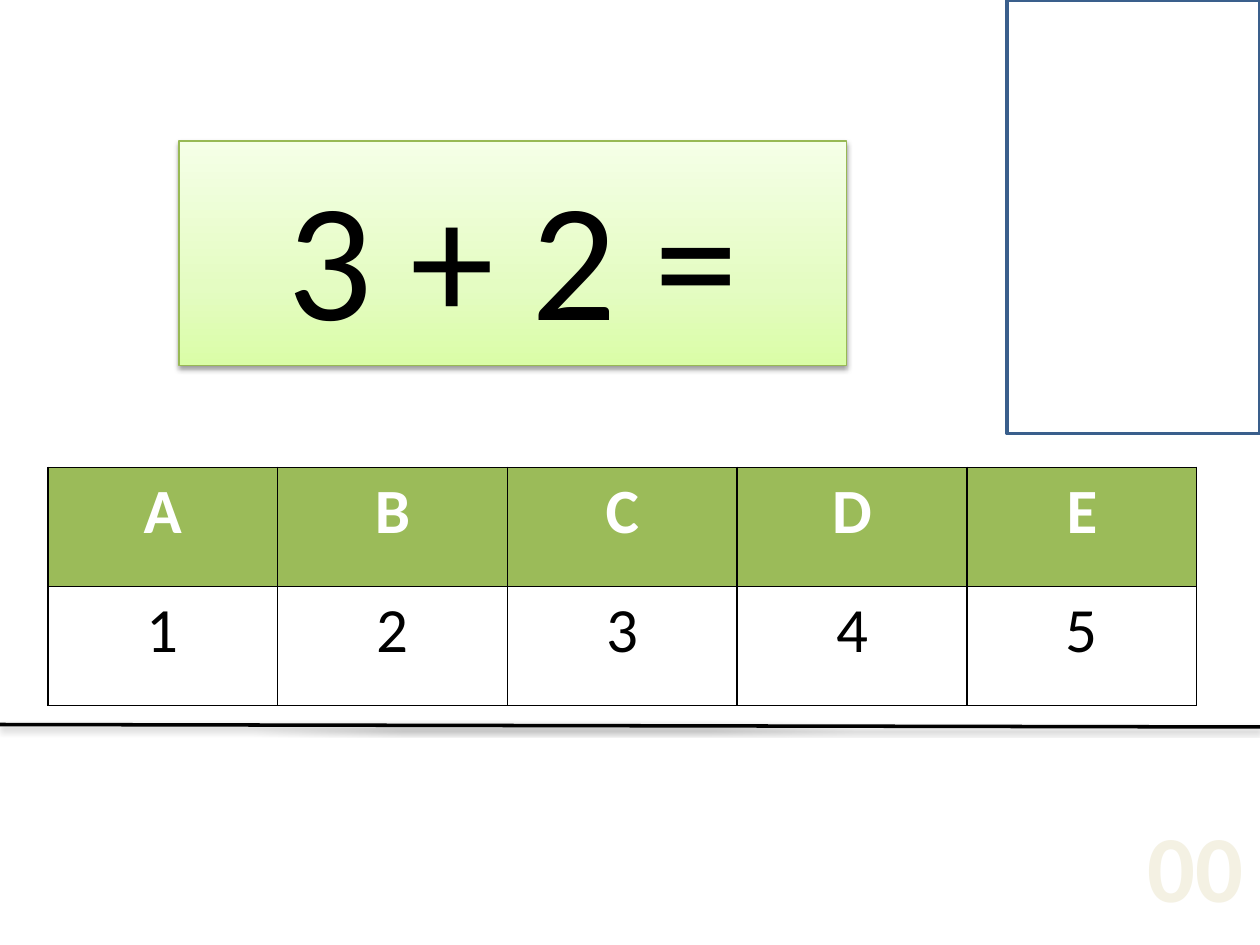
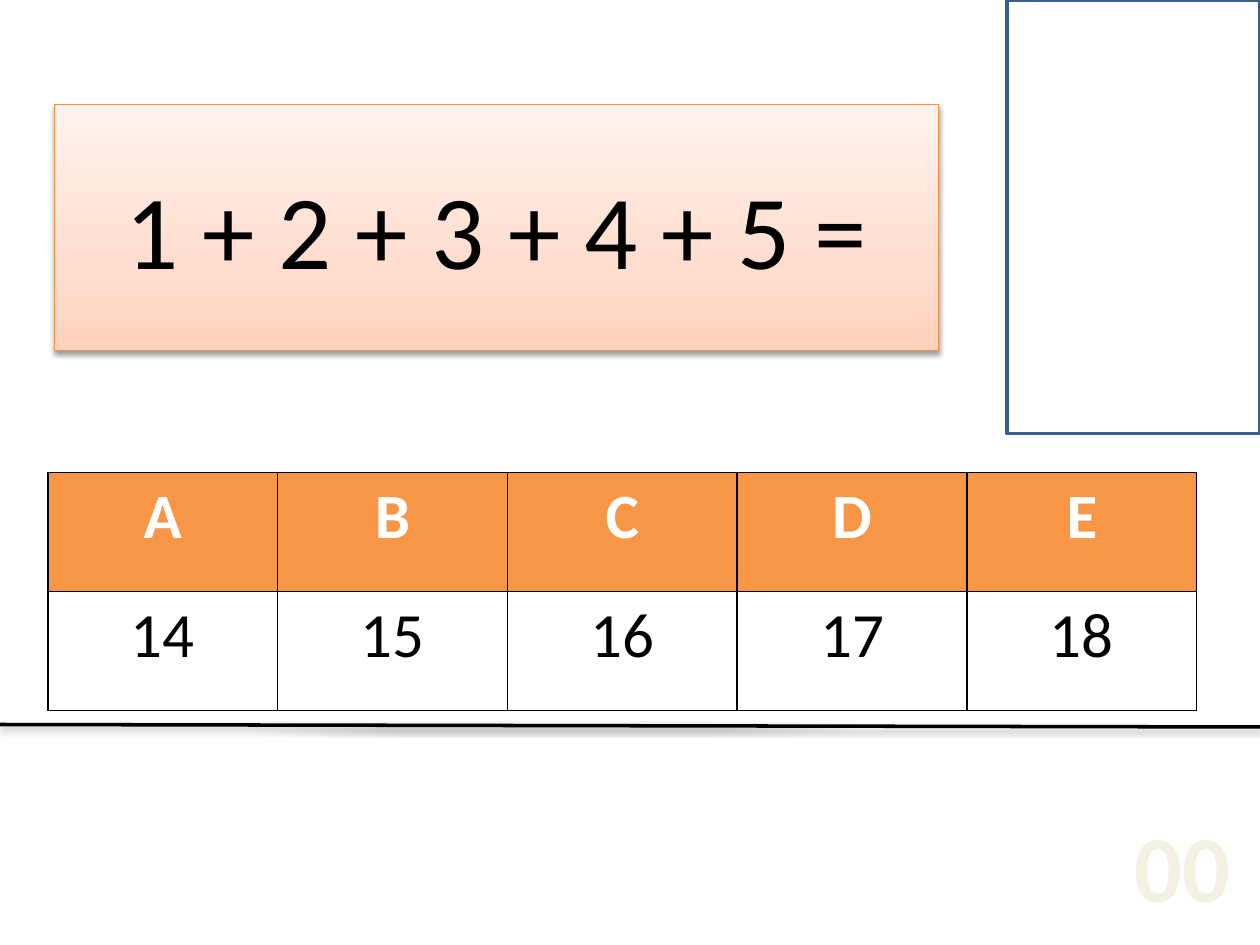
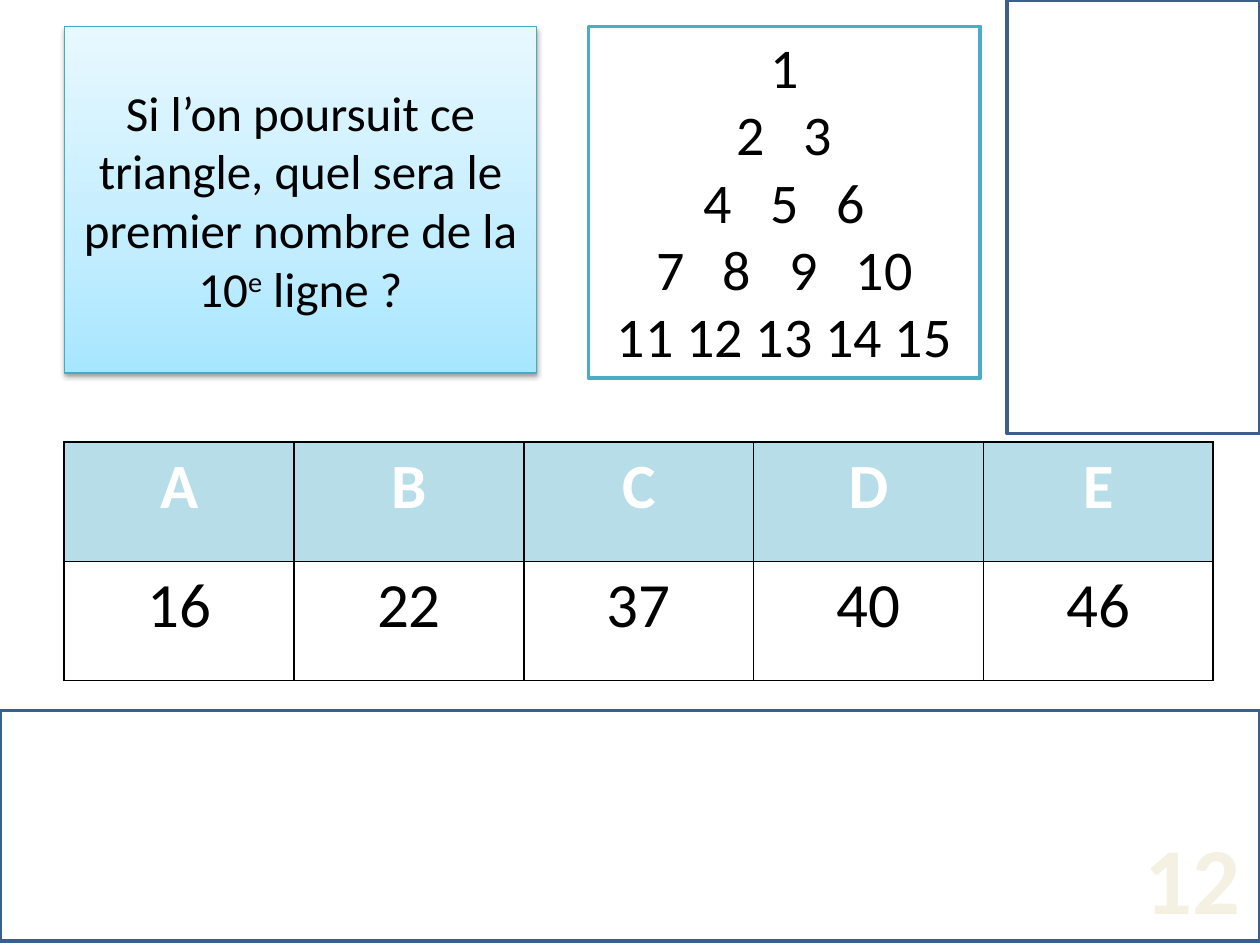
from dataclasses import dataclass
from typing import Any

from lxml.etree import SubElement
from pptx import Presentation
from pptx.dml.color import RGBColor
from pptx.enum.shapes import MSO_CONNECTOR, MSO_SHAPE
from pptx.enum.text import MSO_ANCHOR, PP_ALIGN
from pptx.oxml.ns import qn
from pptx.util import Emu, Inches, Pt

WIDTH, HEIGHT = Inches(10), Inches(7.5)
GRID_COLS, GRID_ROWS = 100, 75
FONT = "Calibri"
BLACK = RGBColor(0x00, 0x00, 0x00)
WHITE = RGBColor(0xFF, 0xFF, 0xFF)
NAVY = RGBColor(0x3A, 0x5F, 0x8C)
CREAM = RGBColor(0xF4, 0xF1, 0xE3)
TEAL = RGBColor(0x4B, 0xAC, 0xC6)
LETTERS = ("A", "B", "C", "D", "E")
STOPS = (0, 35, 100)


@dataclass(frozen=True)
class Box:
    col: float
    row: float
    cols: float
    rows: float

    def emu(self) -> tuple[Emu, Emu, Emu, Emu]:
        return x(self.col), y(self.row), x(self.cols), y(self.rows)


@dataclass(frozen=True)
class Theme:
    gradient: tuple[RGBColor, RGBColor, RGBColor]
    edge: RGBColor
    header: RGBColor


@dataclass(frozen=True)
class Run:
    text: str
    baseline: int = 0
    spacing: float = 0


@dataclass(frozen=True)
class Question:
    theme: Theme
    title: tuple[Run, ...]
    title_box: Box
    size: int
    answers: tuple[str, ...]
    table_box: Box
    counter: str
    counter_box: Box
    triangle: tuple[str, ...] = ()


GREEN_THEME = Theme(
    (RGBColor(0xDA, 0xFD, 0xA7), RGBColor(0xE4, 0xFC, 0xC2), RGBColor(0xF5, 0xFF, 0xE7)),
    RGBColor(0x98, 0xB9, 0x55), RGBColor(0x9B, 0xBB, 0x59))
ORANGE_THEME = Theme(
    (RGBColor(0xFF, 0xD2, 0xBD), RGBColor(0xFF, 0xDE, 0xD0), RGBColor(0xFF, 0xF2, 0xED)),
    RGBColor(0xF6, 0x92, 0x40), RGBColor(0xF7, 0x96, 0x46))
BLUE_THEME = Theme(
    (RGBColor(0xA7, 0xE6, 0xFF), RGBColor(0xC1, 0xED, 0xFF), RGBColor(0xE7, 0xF8, 0xFF)),
    RGBColor(0x46, 0xAA, 0xC5), RGBColor(0xB7, 0xDE, 0xE8))

SIDE_BOX = Box(79.9, 0, 20.1, 34.4)
BOTTOM_BOX = Box(0, 56.4, 100, 18.3)
TRIANGLE_BOX = Box(46.7, 2.1, 31.1, 27.9)

QUESTIONS = (
    Question(GREEN_THEME, (Run("3 + 2 ="),), Box(14.2, 11.2, 53, 17.8), 96,
             ("1", "2", "3", "4", "5"), Box(3.8, 37.1, 91.2, 18.9),
             "00", Box(90, 63.6, 9.7, 10.1)),
    Question(ORANGE_THEME, (Run("1 + 2 + 3 + 4 + 5 ="),), Box(4.3, 8.3, 70.2, 19.5), 60,
             ("14", "15", "16", "17", "18"), Box(3.8, 37.5, 91.2, 18.9),
             "00", Box(89, 63.6, 9.7, 10.1)),
    Question(BLUE_THEME,
             (Run("Si l’on poursuit ce triangle, quel sera le premier nombre de la 10"),
              Run("e", baseline=30), Run(" ligne ?")),
             Box(5.1, 2.1, 37.5, 27.5), 28,
             ("16", "22", "37", "40", "46"), Box(5.1, 35.1, 91.2, 18.9),
             "12", Box(89.8, 64.6, 9.7, 10.1),
             ("1", "2 3", "4 5 6", "7 8 9 10", "11 12 13 14 15")),
)


def x(cols: float) -> Emu:
    return Emu(round(WIDTH * cols / GRID_COLS))


def y(rows: float) -> Emu:
    return Emu(round(HEIGHT * rows / GRID_ROWS))


def add_text(tf: Any, lines: list[tuple[Run, ...]], *, size: float, color: RGBColor = BLACK,
             bold: bool = False, wrap: bool = True,
             anchor: MSO_ANCHOR = MSO_ANCHOR.TOP) -> None:
    tf.word_wrap = wrap
    tf.vertical_anchor = anchor
    for i, line in enumerate(lines):
        p = tf.paragraphs[0] if i == 0 else tf.add_paragraph()
        p.alignment = PP_ALIGN.CENTER
        for run in line:
            r = p.add_run()
            r.text = run.text
            r.font.name = FONT
            r.font.size = Pt(size)
            r.font.bold = bold
            r.font.color.rgb = color
            rPr = r._r.get_or_add_rPr()
            if run.baseline:
                rPr.set("baseline", str(run.baseline * 1000))
            if run.spacing:
                rPr.set("spc", str(round(run.spacing * 100)))


def add_color(parent: Any, color: RGBColor) -> Any:
    return SubElement(parent, qn("a:srgbClr"), val=str(color))


def add_shadow(sp: Any) -> None:
    spPr = sp._element.spPr
    effects = spPr.find(qn("a:effectLst"))
    if effects is None:
        effects = SubElement(spPr, qn("a:effectLst"))
    shadow = SubElement(effects, qn("a:outerShdw"), blurRad="40000", dist="20000",
                        dir="5400000", rotWithShape="0")
    SubElement(add_color(shadow, BLACK), qn("a:alpha"), val="38000")


def add_box(s: Any, box: Box, edge: RGBColor, weight: float = 2,
            fill: RGBColor | None = None) -> Any:
    sp = s.shapes.add_shape(MSO_SHAPE.RECTANGLE, *box.emu())
    sp.shadow.inherit = False
    if fill is None:
        sp.fill.background()
    else:
        sp.fill.solid()
        sp.fill.fore_color.rgb = fill
    sp.line.color.rgb = edge
    sp.line.width = Pt(weight)
    return sp


def add_title(s: Any, q: Question) -> None:
    sp = add_box(s, q.title_box, q.theme.edge, 0.75)
    sp.fill.gradient()
    sp.fill.gradient_angle = 90
    stops = sp._element.spPr.find(qn("a:gradFill")).find(qn("a:gsLst"))
    for stop in list(stops):
        stops.remove(stop)
    for pos, color in zip(STOPS, q.theme.gradient):
        add_color(SubElement(stops, qn("a:gs"), pos=str(pos * 1000)), color)
    add_shadow(sp)
    add_text(sp.text_frame, [q.title], size=q.size, anchor=MSO_ANCHOR.MIDDLE)


def add_borders(cell: Any) -> None:
    tcPr = cell._tc.get_or_add_tcPr()
    for side in ("lnL", "lnR", "lnT", "lnB"):
        ln = SubElement(tcPr, qn(f"a:{side}"), w=str(Pt(1)))
        add_color(SubElement(ln, qn("a:solidFill")), BLACK)


def add_answers(s: Any, q: Question) -> None:
    rows = (LETTERS, q.answers)
    table = s.shapes.add_table(len(rows), len(LETTERS), *q.table_box.emu()).table
    for i, row in enumerate(rows):
        header = i == 0
        for j, value in enumerate(row):
            cell = table.cell(i, j)
            add_borders(cell)
            cell.fill.solid()
            cell.fill.fore_color.rgb = q.theme.header if header else WHITE
            add_text(cell.text_frame, [(Run(value),)], size=36, bold=header,
                     color=WHITE if header else BLACK)


def add_counter(s: Any, q: Question) -> None:
    tb = s.shapes.add_textbox(*q.counter_box.emu())
    add_text(tb.text_frame, [(Run(q.counter),)], size=54, color=CREAM, bold=True, wrap=False)


def add_rule(s: Any) -> None:
    line = s.shapes.add_connector(MSO_CONNECTOR.STRAIGHT, x(0), y(57.5), x(100), y(57.7))
    line.line.color.rgb = BLACK
    line.line.width = Pt(2)
    add_shadow(line)


def spread(row: str) -> tuple[Run, ...]:
    gap = Run(" ", spacing=0 if row.startswith("11") else 14.5)
    first, *rest = row.split()
    return (Run(first), *(run for number in rest for run in (gap, Run(number))))


def add_triangle(s: Any, rows: tuple[str, ...]) -> None:
    sp = add_box(s, TRIANGLE_BOX, TEAL, fill=WHITE)
    add_text(sp.text_frame, [spread(row) for row in rows], size=32)


def add_question(prs: Any, q: Question) -> None:
    s = prs.slides.add_slide(prs.slide_layouts[6])
    add_title(s, q)
    add_answers(s, q)
    add_counter(s, q)
    add_box(s, SIDE_BOX, NAVY)
    if q.triangle:
        add_box(s, BOTTOM_BOX, NAVY)
        add_triangle(s, q.triangle)
    else:
        add_rule(s)


def main() -> None:
    prs = Presentation()
    prs.slide_width, prs.slide_height = WIDTH, HEIGHT
    for q in QUESTIONS:
        add_question(prs, q)
    prs.save("out.pptx")


if __name__ == "__main__":
    main()
